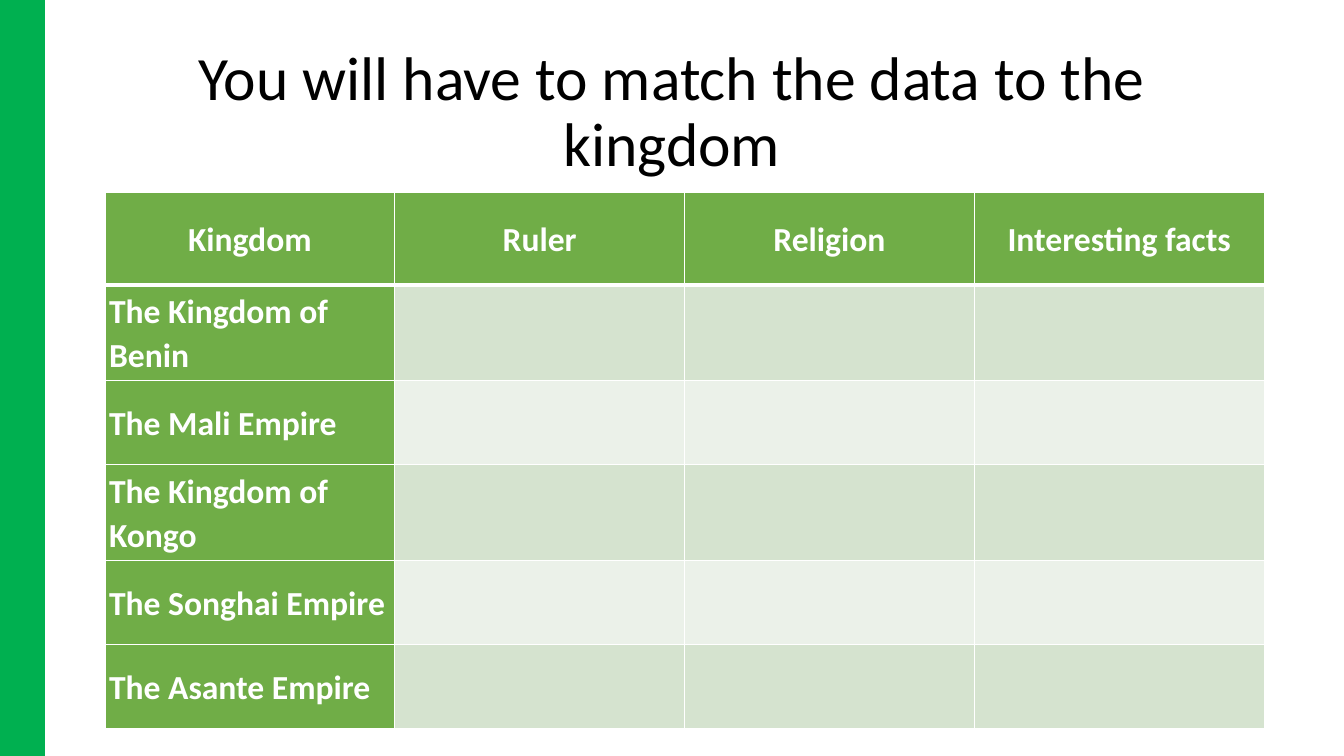
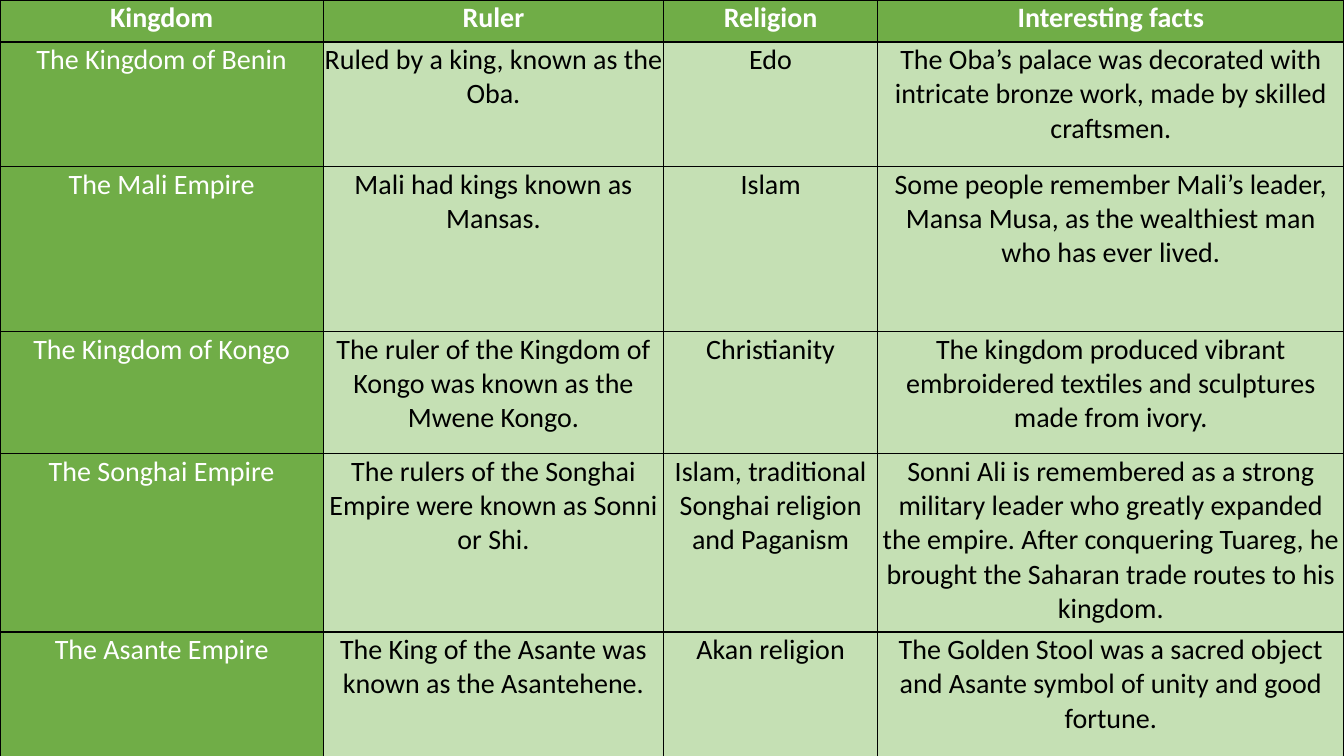
from lxml import etree
from pptx import Presentation
from pptx.dml.color import RGBColor
from pptx.enum.shapes import MSO_SHAPE
from pptx.enum.text import MSO_ANCHOR, MSO_AUTO_SIZE, PP_ALIGN
from pptx.oxml.ns import qn
from pptx.util import Pt

RECTANGLE = MSO_SHAPE.RECTANGLE
TOP, MIDDLE = MSO_ANCHOR.TOP, MSO_ANCHOR.MIDDLE
NO_AUTOFIT = MSO_AUTO_SIZE.NONE
LEFT, CENTER = PP_ALIGN.LEFT, PP_ALIGN.CENTER

# Shared style
FONT = "Calibri"
WHITE, BLACK = "FFFFFF", "000000"
GREEN, BAND_GREEN = "70AD47", "00B050"
STRIPES = ("D5E3CF", "EBF1E9")
PALE_GREEN = "C5E0B4"
SLIDE_WIDTH, SLIDE_HEIGHT = 960, 540

# Content
TITLE = "You will have to match the data to the kingdom"
HEADINGS = ["Kingdom", "Ruler", "Religion", "Interesting facts"]
KINGDOMS = [
    ["The Kingdom of Benin", "Ruled by a king, known as the Oba.", "Edo",
     "The Oba’s palace was decorated with intricate bronze work, made by skilled craftsmen."],
    ["The Mali Empire", "Mali had kings known as Mansas.", "Islam",
     "Some people remember Mali’s leader, Mansa Musa, as the wealthiest man who has ever lived."],
    ["The Kingdom of Kongo",
     "The ruler of the Kingdom of Kongo was known as the Mwene Kongo.", "Christianity",
     "The kingdom produced vibrant embroidered textiles and sculptures made from ivory."],
    ["The Songhai Empire",
     "The rulers of the Songhai Empire were known as Sonni or Shi.",
     "Islam, traditional Songhai religion and Paganism",
     "Sonni Ali is remembered as a strong military leader who greatly expanded the empire. "
     "After conquering Tuareg, he brought the Saharan trade routes to his kingdom."],
    ["The Asante Empire", "The King of the Asante was known as the Asantehene.",
     "Akan religion",
     "The Golden Stool was a sacred object and Asante symbol of unity and good fortune."],
]
ANSWERS = [HEADINGS] + KINGDOMS
WORKSHEET = [HEADINGS] + [[row[0], "", "", ""] for row in KINGDOMS]


def color(hex_value):
    return RGBColor.from_string(hex_value)


def write(paragraph, text, size, hex_value, bold=False, align=CENTER):
    paragraph.alignment = align
    run = paragraph.add_run()
    run.text = text
    run.font.name, run.font.size, run.font.bold = FONT, Pt(size), bold
    run.font.color.rgb = color(hex_value)


def set_borders(cell, hex_value, widths):
    """Draw the left, right, top and bottom lines, which precede the cell fill."""
    properties = cell._tc.get_or_add_tcPr()
    for index, (side, width) in enumerate(zip("LRTB", widths)):
        line = etree.Element(qn(f"a:ln{side}"), w=str(Pt(width)))
        fill = etree.SubElement(line, qn("a:solidFill"))
        etree.SubElement(fill, qn("a:srgbClr"), val=hex_value)
        properties.insert(index, line)


def add_grid(slide, rows, left, top, widths, heights, inset, anchor, line_color):
    frame = slide.shapes.add_table(len(rows), len(widths), Pt(left), Pt(top),
                                   Pt(sum(widths)), Pt(sum(heights)))
    table = frame.table
    table.first_row = table.horz_banding = False
    for column, width in zip(table.columns, widths):
        column.width = Pt(width)
    for row, height in zip(table.rows, heights):
        row.height = Pt(height)
    for cell in table.iter_cells():
        cell.vertical_anchor = anchor
        cell.margin_left = cell.margin_right = Pt(inset)
        cell.margin_top = cell.margin_bottom = Pt(inset)
        cell.fill.solid()
        cell.fill.fore_color.rgb = color(GREEN)
        set_borders(cell, line_color, (1, 1, 1, 1))
    return table


def build_worksheet(presentation):
    slide = presentation.slides.add_slide(presentation.slide_layouts[5])

    # Title
    title = slide.shapes.title
    title.left, title.top, title.width, title.height = Pt(66), Pt(29), Pt(828), Pt(104)
    title.text_frame.auto_size = NO_AUTOFIT
    title.text_frame.vertical_anchor = MIDDLE
    paragraph = title.text_frame.paragraphs[0]
    paragraph.line_spacing = 0.9
    write(paragraph, TITLE, 44, BLACK)

    # Side band
    band = slide.shapes.add_shape(RECTANGLE, 0, 0, Pt(32), Pt(SLIDE_HEIGHT))
    band.shadow.inherit = False
    band.fill.solid()
    band.fill.fore_color.rgb = color(BAND_GREEN)
    band.line.fill.background()

    # Table to fill in
    table = add_grid(slide, WORKSHEET, 75, 137.5, [207] * 4, [66] + [60] * 5,
                     2.9, MIDDLE, WHITE)
    for row, texts in enumerate(WORKSHEET):
        for column, text in enumerate(texts):
            cell = table.cell(row, column)
            if row and column:
                cell.fill.fore_color.rgb = color(STRIPES[(row - 1) % 2])
            if text:
                paragraph = cell.text_frame.paragraphs[0]
                paragraph.line_spacing, paragraph.space_after = 1.07, Pt(8)
                write(paragraph, text, 24, WHITE, True, LEFT if row else CENTER)
    # Thick rule under the headings
    for column in range(len(HEADINGS)):
        for row, side in ((0, "a:lnB"), (1, "a:lnT")):
            properties = table.cell(row, column)._tc.get_or_add_tcPr()
            properties.find(qn(side)).set("w", str(Pt(3)))


def build_answers(presentation):
    slide = presentation.slides.add_slide(presentation.slide_layouts[6])
    table = add_grid(slide, ANSWERS, 0, 0, [231, 243, 153, 333],
                     [30, 89, 118, 87, 127.5, 89], 0.7, TOP, BLACK)
    for row, texts in enumerate(ANSWERS):
        for column, text in enumerate(texts):
            cell = table.cell(row, column)
            is_body = row > 0 and column > 0
            if is_body:
                cell.fill.fore_color.rgb = color(PALE_GREEN)
            write(cell.text_frame.paragraphs[0], text, 20,
                  BLACK if is_body else WHITE, bold=row == 0)


def main():
    presentation = Presentation()
    presentation.slide_width, presentation.slide_height = Pt(SLIDE_WIDTH), Pt(SLIDE_HEIGHT)
    build_worksheet(presentation)
    build_answers(presentation)
    presentation.save("out.pptx")


if __name__ == "__main__":
    main()
